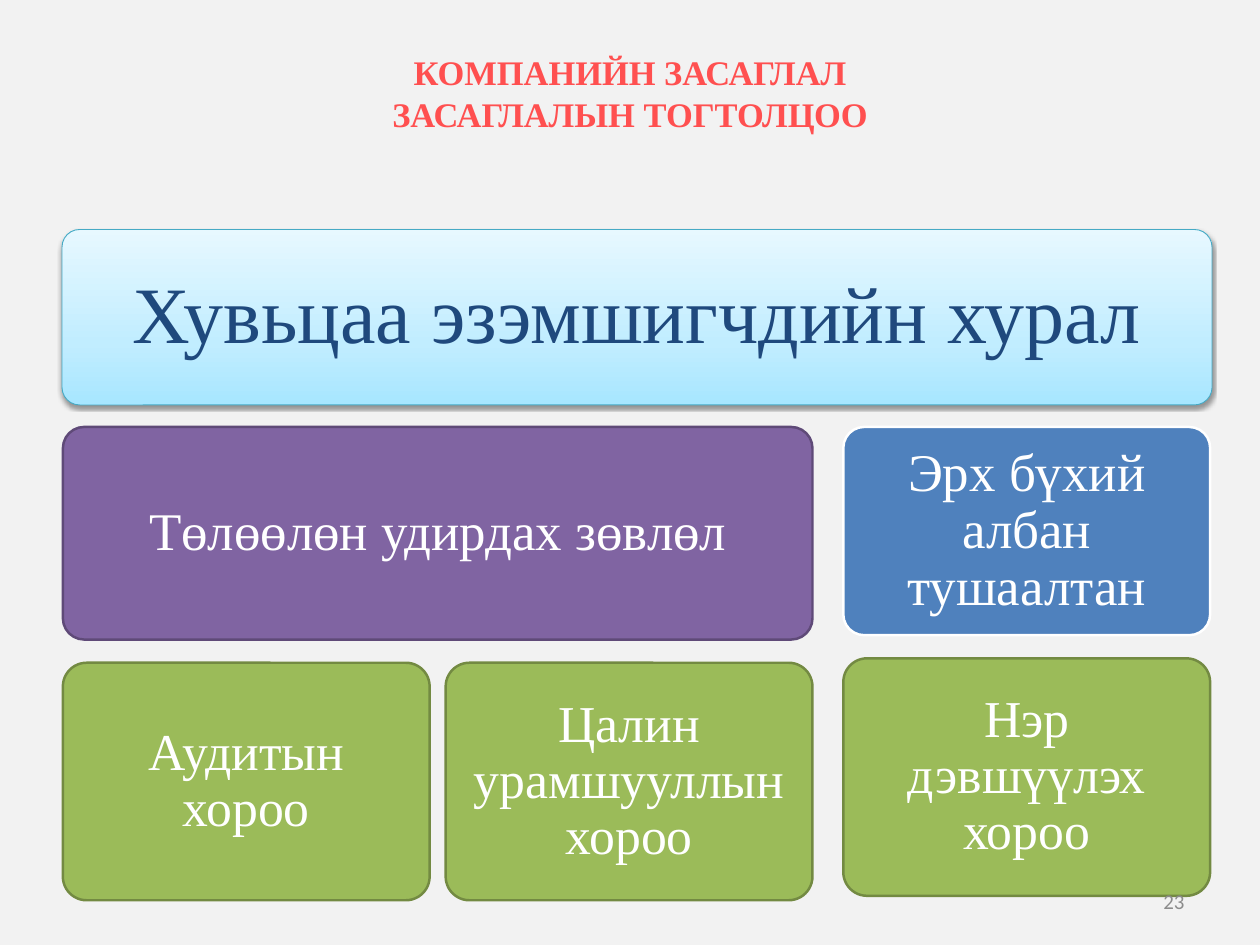
from copy import deepcopy

from lxml.etree import SubElement
from pptx import Presentation
from pptx.dml.color import RGBColor
from pptx.enum.shapes import MSO_SHAPE
from pptx.enum.text import MSO_ANCHOR, PP_ALIGN
from pptx.oxml.ns import qn
from pptx.util import Pt

SERIF = "Times New Roman"
LEFT, GAP, SMALL = 51.1, 13, 298.1
RIGHT = 685.4
WIDE = 2 * SMALL + GAP
GREEN = ("9BBB59", "738A42")


def color(code):
    """Turn a hex string into a colour."""
    return RGBColor.from_string(code)


def write(shape, text, size, code, font=SERIF, align=PP_ALIGN.CENTER, pad=(10, 5)):
    """Put one styled, vertically centred paragraph into a shape."""
    frame = shape.text_frame
    frame.word_wrap = True
    frame.vertical_anchor = MSO_ANCHOR.MIDDLE
    frame.margin_left = frame.margin_right = Pt(pad[0])
    frame.margin_top = frame.margin_bottom = Pt(pad[1])
    para = frame.paragraphs[0]
    para.text = text
    para.alignment = align
    para.font.name = font
    para.font.size = Pt(size)
    para.font.color.rgb = color(code)
    return para


def label(slide, box, text, size, code, **style):
    """Add a free text box."""
    shape = slide.shapes.add_textbox(*map(Pt, box))
    return write(shape, text, size, code, **style)


def card(slide, box, text, size, pad, fill, line, width=2, ink="FFFFFF"):
    """Add a rounded box with text."""
    shape = slide.shapes.add_shape(MSO_SHAPE.ROUNDED_RECTANGLE, *map(Pt, box))
    shape.adjustments[0] = 0.1
    shape.shadow.inherit = False
    shape.fill.solid()
    shape.fill.fore_color.rgb = color(fill)
    shape.line.color.rgb = color(line)
    shape.line.width = Pt(width)
    write(shape, text, size, ink, pad=(pad, pad)).line_spacing = 0.9
    return shape


def shade(shape, stops):
    """Fill a shape with a gradient that rises from the bottom edge."""
    fill = shape.fill
    fill.gradient()
    fill.gradient_angle = 90
    items = shape._element.spPr.find(".//" + qn("a:gsLst"))
    items.append(deepcopy(items[-1]))
    for stop, (place, code) in zip(fill.gradient_stops, stops):
        stop.position = place
        stop.color.rgb = color(code)


def shadow(shape):
    """Cast a soft shadow below a shape."""
    effect = shape._element.spPr.find(qn("a:effectLst"))
    outer = SubElement(effect, qn("a:outerShdw"), blurRad=str(Pt(3.1)),
                       dist=str(Pt(1.6)), dir="5400000", rotWithShape="0")
    tint = SubElement(outer, qn("a:srgbClr"), val="000000")
    SubElement(tint, qn("a:alpha"), val="38000")


def main():
    """Build the governance slide."""
    deck = Presentation()
    deck.slide_width, deck.slide_height = Pt(1024), Pt(768)
    slide = deck.slides.add_slide(deck.slide_layouts[6])
    slide.background.fill.solid()
    slide.background.fill.fore_color.rgb = color("F2F2F2")

    title = label(slide, (51, 31, 922, 89),
                  "КОМПАНИЙН ЗАСАГЛАЛ\nЗАСАГЛАЛЫН ТОГТОЛЦОО", 28, "FF5050")
    title.font.bold = True

    top = card(slide, (50.4, 186.5, 934.6, 142.6), "Хувьцаа эзэмшигчдийн хурал",
               65, 19.4, "C1EDFF", "46AAC5", 0.75, "1F497D")
    shade(top, [(0, "A7E6FF"), (0.35, "C1EDFF"), (1, "E7F8FF")])
    shadow(top)

    card(slide, (LEFT, 347, WIDE, 172.8), "Төлөөлөн удирдах зөвлөл",
         43, 13, "8064A2", "5F4A78")
    card(slide, (RIGHT, 347, SMALL, 169.2), "Эрх бүхий албан тушаалтан",
         43, 13, "4F81BD", "FFFFFF")

    teams = [
        (LEFT, 538.6, "Аудитын хороо"),
        (LEFT + SMALL + GAP, 538.6, "Цалин урамшууллын хороо"),
        (RIGHT, 535, "Нэр дэвшүүлэх хороо"),
    ]
    for x, y, name in teams:
        card(slide, (x, y, SMALL, 193), name, 42, 12.2, *GREEN)

    label(slide, (733.7, 712, 239, 41), "23", 17, "8C8C8C",
          font="Calibri", align=PP_ALIGN.RIGHT)
    deck.save("out.pptx")


if __name__ == "__main__":
    main()
